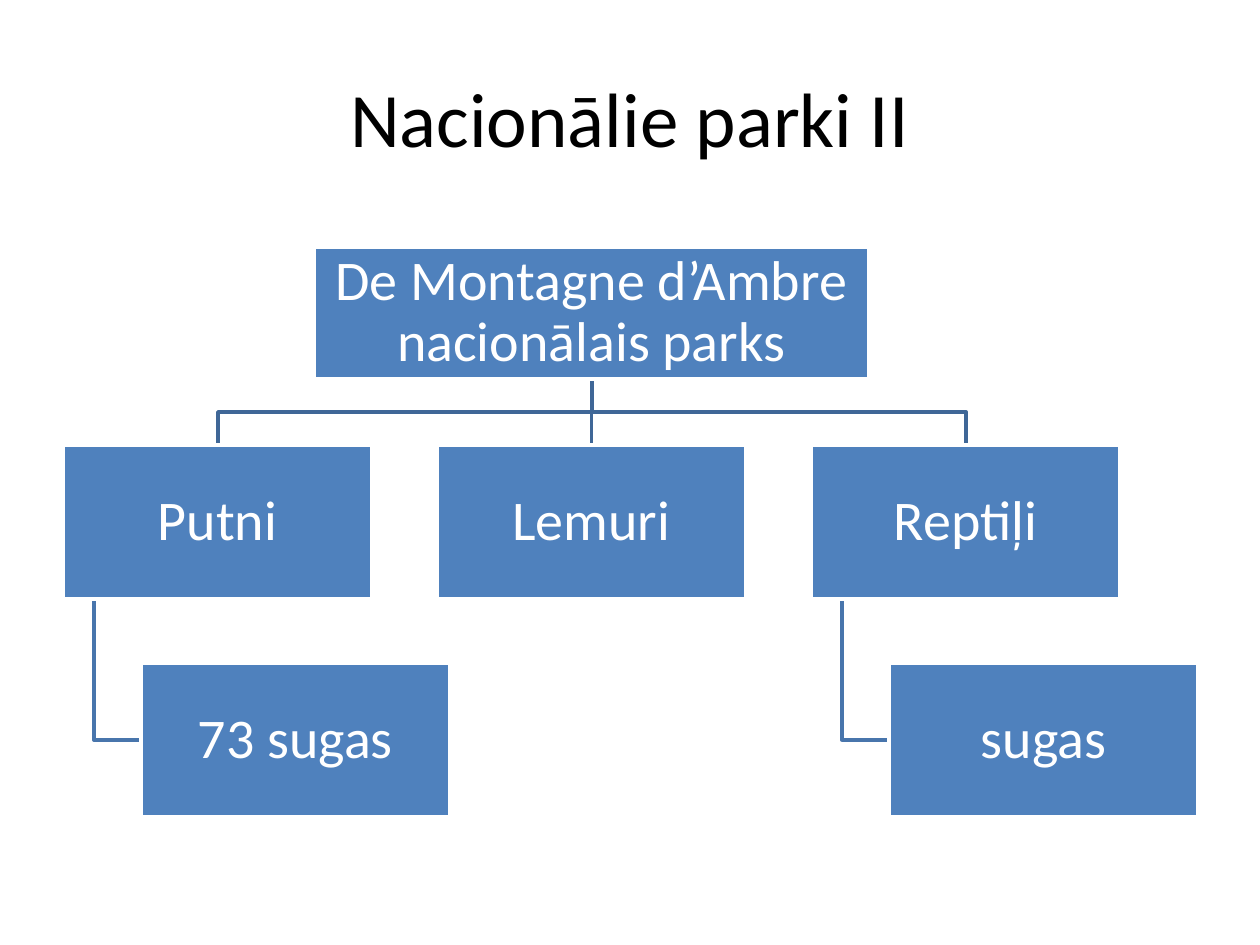
from lxml import etree
from pptx import Presentation
from pptx import util as u
from pptx.dml.color import RGBColor
from pptx.enum import shapes, text
from pptx.oxml.ns import qn

PX = u.Inches(10) / 1260
FONT = "Calibri"
BLUE, WHITE, BLACK = "4F81BD", "FFFFFF", "000000"
BRANCH_LINE, LEAF_LINE = "3F6797", "4875AC"

ROOT = "De Montagne d’Ambre nacionālais parks"
BRANCHES = [("Putni", "73 sugas"), ("Lemuri", None), ("Reptiļi", "sugas")]


def px(value):
    return u.Emu(round(value * PX))


def color(hex_string):
    return RGBColor.from_string(hex_string)


def set_line(shape, hex_string):
    shape.line.color.rgb = color(hex_string)
    shape.line.width = u.Pt(2)


def write(shape, words, size, hex_string, margin=None, spacing=None):
    """Put one centred paragraph into the shape."""
    frame = shape.text_frame
    frame.word_wrap = True
    frame.vertical_anchor = text.MSO_ANCHOR.MIDDLE
    if margin is not None:
        frame.margin_left = frame.margin_right = px(margin)
        frame.margin_top = frame.margin_bottom = px(margin)
    para = frame.paragraphs[0]
    para.alignment = text.PP_ALIGN.CENTER
    para.line_spacing = spacing
    span = para.add_run()
    span.text = words
    span.font.name = FONT
    span.font.size = u.Pt(size)
    span.font.color.rgb = color(hex_string)


def add_title(page, left, top, width, height):
    title = page.shapes.title
    title.left, title.top, title.width, title.height = map(px, (left, top, width, height))
    write(title, "Nacionālie parki II", 44, BLACK)


def add_node(page, words, left, top, width, height):
    box = page.shapes.add_shape(
        shapes.MSO_SHAPE.RECTANGLE, *map(px, (left, top, width, height)))
    box.shadow.inherit = False
    box.fill.solid()
    box.fill.fore_color.rgb = color(BLUE)
    set_line(box, WHITE)
    write(box, words, 32, WHITE, margin=3, spacing=0.9)
    return box


def add_bent_line(page, points, hex_string):
    builder = page.shapes.build_freeform(*points[0], scale=PX)
    builder.add_line_segments(points[1:], close=False)
    bend = builder.convert_to_shape()
    bend.shadow.inherit = False
    bend.fill.background()
    set_line(bend, hex_string)


def add_straight_line(page, start, end, hex_string):
    line = page.shapes.add_connector(
        shapes.MSO_CONNECTOR.STRAIGHT, *map(px, (*start, *end)))
    etree.SubElement(line._element.spPr, qn("a:effectLst"))
    set_line(line, hex_string)
    return line


def add_hierarchy(page, left, top):
    """Draw the lines first, so that the white box outlines cover their ends."""
    node_width, node_height, step = 309, 154, 374
    root_width, root_height = 554, 132
    branch_top, leaf_top = top + 198, top + 416
    leaf_indent, stem_indent = 78, 31
    center = left + step + node_width / 2
    root_bottom = top + root_height
    bar = (root_bottom + branch_top) / 2
    leaf_middle = leaf_top + node_height / 2
    columns = [(left + index * step, *names) for index, names in enumerate(BRANCHES)]

    trunk = None
    for x, _, leaf in columns:
        middle = x + node_width / 2
        if middle == center:
            trunk = add_straight_line(
                page, (center, root_bottom), (center, branch_top), BRANCH_LINE)
        else:
            add_bent_line(page, [(center, root_bottom), (center, bar),
                                 (middle, bar), (middle, branch_top)], BRANCH_LINE)
        if leaf:
            stem = x + stem_indent
            add_bent_line(page, [(stem, branch_top + node_height), (stem, leaf_middle),
                                 (x + leaf_indent, leaf_middle)], LEAF_LINE)

    root = add_node(page, ROOT, center - root_width / 2, top, root_width, root_height)
    for x, name, leaf in columns:
        branch = add_node(page, name, x, branch_top, node_width, node_height)
        if x + node_width / 2 == center:
            trunk.begin_connect(root, 2)
            trunk.end_connect(branch, 0)
        if leaf:
            add_node(page, leaf, x + leaf_indent, leaf_top, node_width, node_height)


def main():
    deck = Presentation()
    deck.slide_width, deck.slide_height = px(1260), px(945)
    page = deck.slides.add_slide(deck.slide_layouts[5])
    add_title(page, 63, 38, 1134, 157)
    add_hierarchy(page, 63, 247)
    deck.save("out.pptx")


if __name__ == "__main__":
    main()
